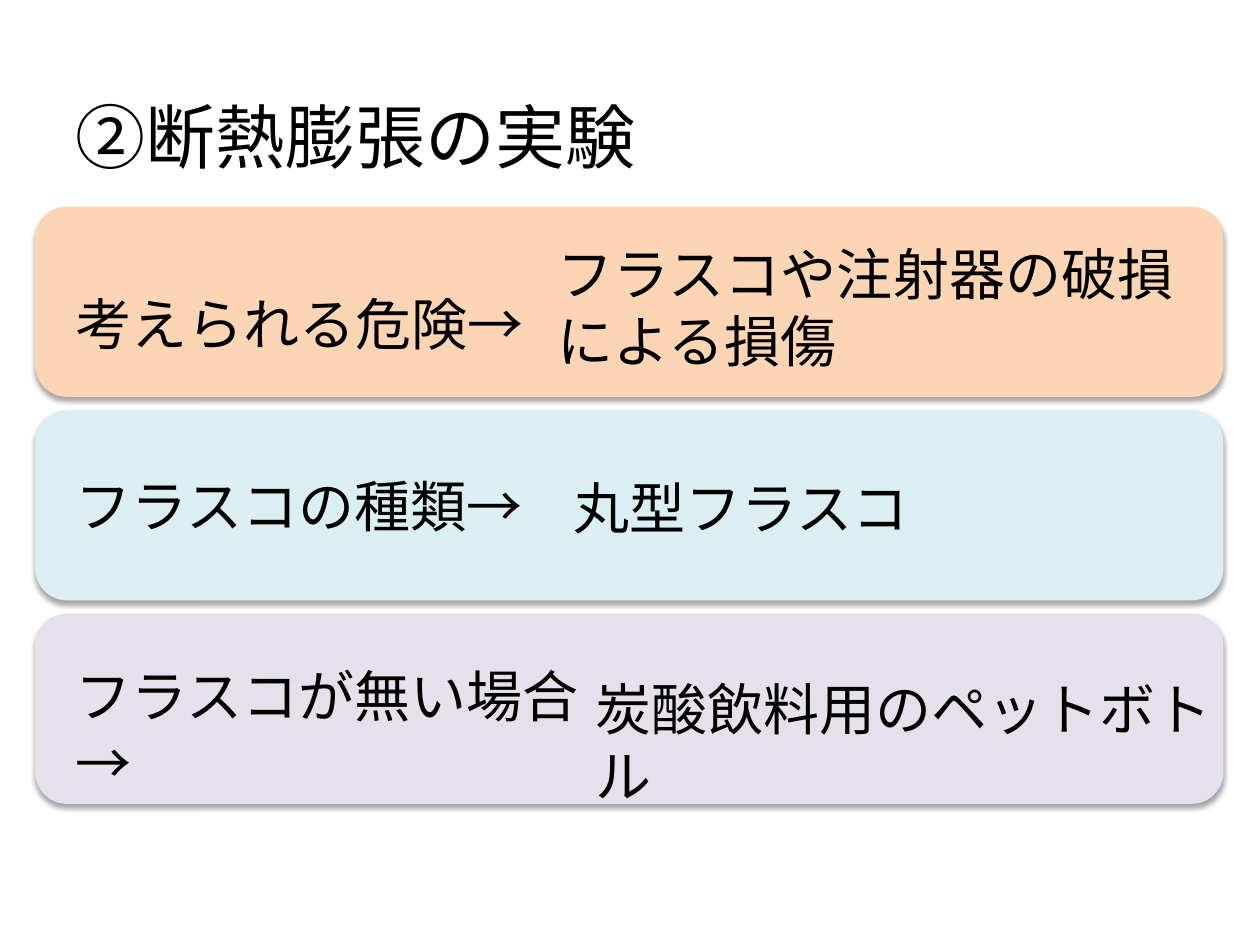
from pptx import Presentation
from pptx.dml.color import RGBColor
from pptx.enum.shapes import MSO_SHAPE
from pptx.enum.text import MSO_ANCHOR, MSO_AUTO_SIZE, PP_ALIGN
from pptx.oxml import parse_xml
from pptx.util import Inches, Pt

ROUND = MSO_SHAPE.ROUNDED_RECTANGLE
TOP, LEFT, FIXED = MSO_ANCHOR.TOP, PP_ALIGN.LEFT, MSO_AUTO_SIZE.NONE

# Content: band colour, label and its top, answer and its box
COLORS = {"ink": "000000", "peach": "FCD5B5", "aqua": "DBEEF4", "lilac": "E6E0EC"}
TITLE = "②断熱膨張の実験"
ROWS = [
    ("peach", "考えられる危険→", 2.25,
     "フラスコや注射器の破損による損傷", (4.33, 1.85, 5.13, 1.18)),
    ("aqua", "フラスコの種類→", 3.69,
     "丸型フラスコ", (4.45, 3.71, 3.04, 0.64)),
    ("lilac", "フラスコが無い場合→", 5.2,
     "炭酸飲料用のペットボトル", (4.63, 5.3, 5.18, 1.18)),
]
BAND = {"left": 0.28, "top": 1.64, "width": 9.43, "height": 1.51, "step": 1.615}
LABEL = {"left": 0.5, "width": 4.48, "height": 1.18}
FRAME = {"word_wrap": True, "auto_size": FIXED, "vertical_anchor": TOP}
SHADOW = (
    '<a:outerShdw xmlns:a="http://schemas.openxmlformats.org/drawingml/2006/main"'
    ' blurRad="40000" dist="23000" dir="5400000" rotWithShape="0">'
    '<a:srgbClr val="000000"><a:alpha val="35000"/></a:srgbClr></a:outerShdw>'
)


def color(name):
    return RGBColor.from_string(COLORS[name])


def write(box, text, size):
    frame = box.text_frame
    for key, value in FRAME.items():
        setattr(frame, key, value)
    para = frame.paragraphs[0]
    para.alignment = LEFT
    run = para.add_run()
    run.text = text
    for key, value in {"name": "Calibri", "size": Pt(size)}.items():
        setattr(run.font, key, value)
    run.font.color.rgb = color("ink")


def add_text(slide, text, area):
    write(slide.shapes.add_textbox(*map(Inches, area)), text, 32)


def add_band(slide, row, fill):
    top = BAND["top"] + row * BAND["step"]
    area = (BAND["left"], top, BAND["width"], BAND["height"])
    band = slide.shapes.add_shape(ROUND, *map(Inches, area))
    band.fill.solid()
    band.fill.fore_color.rgb = color(fill)
    band.line.fill.background()
    # Soft shadow below the band
    band.shadow.inherit = False
    band._element.spPr.effectLst.append(parse_xml(SHADOW)) if hasattr(
        band._element.spPr, "effectLst") else band._element.spPr[-1].append(
        parse_xml(SHADOW))


def main():
    deck = Presentation()
    deck.slide_width, deck.slide_height = Inches(10), Inches(7.5)
    slide = deck.slides.add_slide(deck.slide_layouts[5])

    # Title
    title = slide.shapes.title
    place = {"left": 0.5, "top": 0.69, "width": 7.23, "height": 0.77}
    for key, value in place.items():
        setattr(title, key, Inches(value))
    write(title, TITLE, 40)

    # Bands, each with a label and an answer
    for row, (fill, label, top, answer, area) in enumerate(ROWS):
        add_band(slide, row, fill)
        add_text(slide, label, (LABEL["left"], top, LABEL["width"], LABEL["height"]))
        add_text(slide, answer, area)

    deck.save("out.pptx")


if __name__ == "__main__":
    main()
